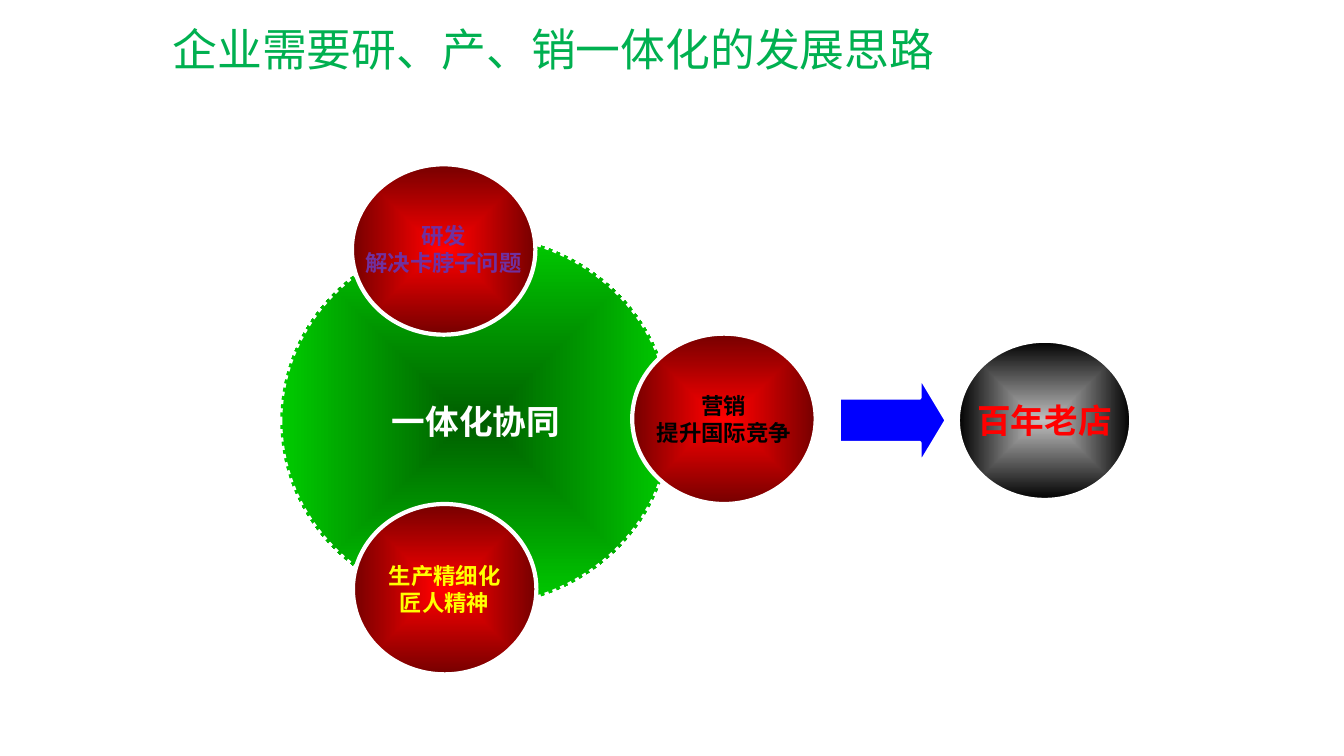
from dataclasses import dataclass

from lxml import etree
from pptx import Presentation
from pptx import util as u
from pptx.dml.color import RGBColor
from pptx.enum import dml, shapes, text
from pptx.oxml.ns import qn

WHITE = RGBColor(0xFF, 0xFF, 0xFF)
BLACK = RGBColor(0x00, 0x00, 0x00)
SILVER = RGBColor(0xC0, 0xC0, 0xC0)
RED = RGBColor(0xFF, 0x00, 0x00)
DARK_RED = RGBColor(0x76, 0x00, 0x00)
GREEN = RGBColor(0x00, 0xCC, 0x00)
DARK_GREEN = RGBColor(0x00, 0x5E, 0x00)
TITLE_GREEN = RGBColor(0x00, 0xB0, 0x50)
YELLOW = RGBColor(0xFF, 0xFF, 0x00)
PURPLE = RGBColor(0x70, 0x30, 0xA0)
BLUE = RGBColor(0x00, 0x00, 0xFF)

SERIF = "Times New Roman"


@dataclass(frozen=True)
class Circle:
    left: float
    top: float
    width: float
    height: float
    lines: tuple[str, ...]
    text_color: RGBColor
    center_color: RGBColor = RED
    edge_color: RGBColor = DARK_RED
    size: int = 16
    font: str = SERIF
    dotted: bool = False


CIRCLES = (
    Circle(2.78, 2.33, 3.88, 3.69, ("一体化协同",), WHITE,
           DARK_GREEN, GREEN, size=24, dotted=True),
    Circle(3.5, 5, 1.82, 1.69, ("生产精细化", "匠人精神"), YELLOW),
    Circle(3.49, 1.63, 1.82, 1.69, ("研发", "解决卡脖子问题"), PURPLE),
    Circle(6.27, 3.31, 1.82, 1.69, ("营销", "提升国际竞争"), BLACK),
    Circle(9.5, 3.38, 1.72, 1.58, ("百年老店",), RED,
           SILVER, BLACK, size=24, font="Lato"),
)


def write_text(frame, lines: tuple[str, ...], *, size: int, font: str,
               color: RGBColor, bold: bool = False,
               align=text.PP_ALIGN.CENTER, anchor=text.MSO_ANCHOR.MIDDLE,
               wrap: bool = False, line_spacing: float | None = None) -> None:
    frame.auto_size = text.MSO_AUTO_SIZE.NONE
    frame.word_wrap = wrap
    frame.vertical_anchor = anchor
    for index, line in enumerate(lines):
        paragraph = frame.add_paragraph() if index else frame.paragraphs[0]
        paragraph.alignment = align
        paragraph.line_spacing = line_spacing
        run = paragraph.add_run()
        run.text = line
        run.font.size = u.Pt(size)
        run.font.name = font
        run.font.bold = bold
        run.font.color.rgb = color


def fill_from_center(shape, center: RGBColor, edge: RGBColor) -> None:
    """Give the shape a gradient that spreads from its middle to its edge."""
    shape.fill.gradient()
    for stop, position, color in zip(shape.fill.gradient_stops, (0, 1), (center, edge)):
        stop.position = position
        stop.color.rgb = color
    gradient = shape.element.spPr.find(qn("a:gradFill"))
    gradient.remove(gradient.find(qn("a:lin")))
    spread = etree.SubElement(gradient, qn("a:path"), {"path": "shape"})
    etree.SubElement(spread, qn("a:fillToRect"), dict.fromkeys("ltrb", "50000"))


def add_outlined_shape(slide, kind, left: float, top: float, width: float, height: float):
    shape = slide.shapes.add_shape(
        kind, u.Inches(left), u.Inches(top), u.Inches(width), u.Inches(height))
    shape.shadow.inherit = False
    shape.line.color.rgb = WHITE
    shape.line.width = u.Pt(3)
    return shape


def add_circle(slide, circle: Circle) -> None:
    shape = add_outlined_shape(slide, shapes.MSO_SHAPE.OVAL, circle.left, circle.top,
                               circle.width, circle.height)
    fill_from_center(shape, circle.center_color, circle.edge_color)
    if circle.dotted:
        shape.line.dash_style = dml.MSO_LINE.ROUND_DOT
    write_text(shape.text_frame, circle.lines, size=circle.size, font=circle.font,
               color=circle.text_color, bold=True)


def add_arrow(slide) -> None:
    arrow = add_outlined_shape(slide, shapes.MSO_SHAPE.RIGHT_ARROW, 8.32, 3.72, 1.07, 0.9)
    arrow.adjustments[0] = 0.5
    arrow.adjustments[1] = 0.3
    arrow.fill.solid()
    arrow.fill.fore_color.rgb = BLUE


def set_title(slide) -> None:
    title = slide.shapes.title
    title.left, title.top = u.Inches(1.71), u.Inches(0.28)
    title.width, title.height = u.Inches(9.34), u.Inches(0.72)
    frame = title.text_frame
    frame.margin_left = frame.margin_top = frame.margin_right = frame.margin_bottom = 0
    write_text(frame, ("企业需要研、产、销一体化的发展思路",), size=32, font="Calibri",
               color=TITLE_GREEN, align=text.PP_ALIGN.LEFT,
               anchor=text.MSO_ANCHOR.TOP, wrap=True, line_spacing=0.9)


def main() -> None:
    presentation = Presentation()
    presentation.slide_width = u.Inches(13.33)
    presentation.slide_height = u.Inches(7.5)
    slide = presentation.slides.add_slide(presentation.slide_layouts.get_by_name("Title Only"))
    set_title(slide)
    for circle in CIRCLES:
        add_circle(slide, circle)
    add_arrow(slide)
    presentation.save("out.pptx")


if __name__ == "__main__":
    main()
